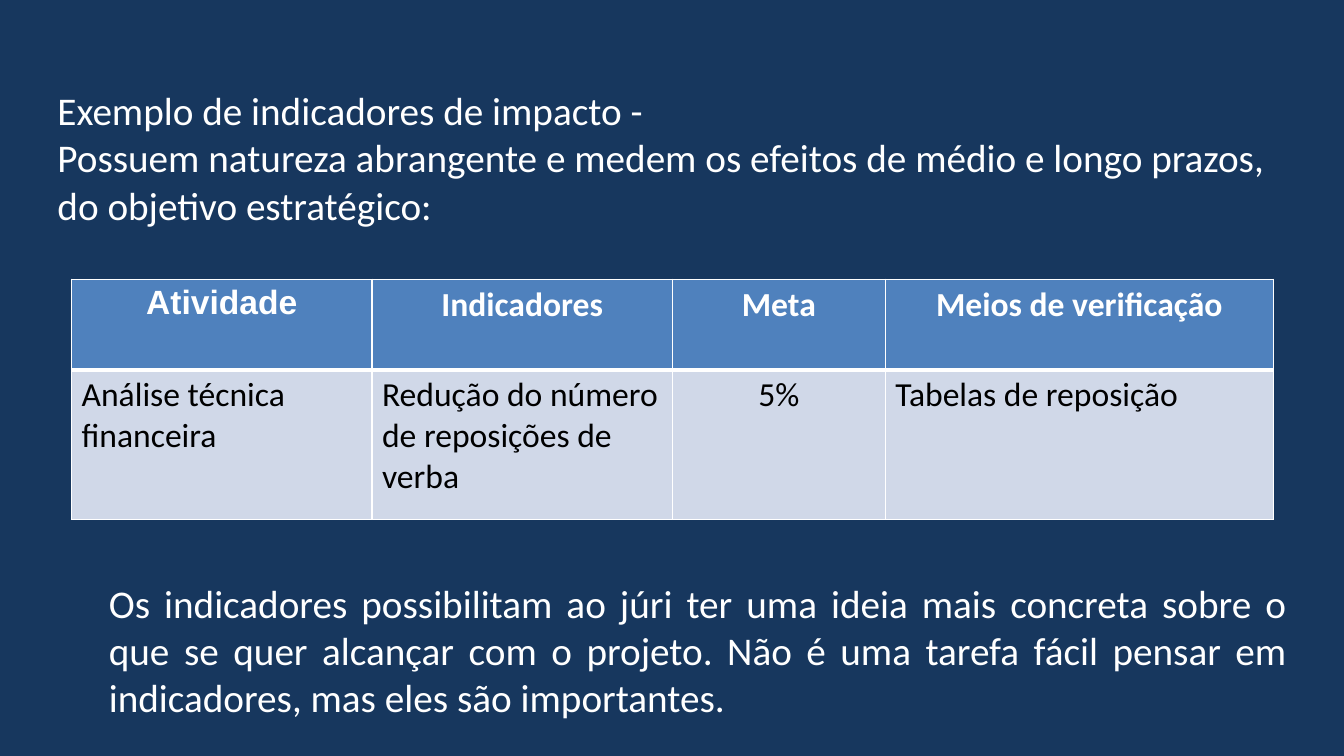
from lxml import etree
from pptx import Presentation
from pptx.dml.color import RGBColor
from pptx.enum.text import MSO_ANCHOR, MSO_AUTO_SIZE, PP_ALIGN
from pptx.oxml.ns import qn
from pptx.util import Inches, Pt

LEFT, CENTER, JUSTIFY = PP_ALIGN.LEFT, PP_ALIGN.CENTER, PP_ALIGN.JUSTIFY
TOP = MSO_ANCHOR.TOP
FIXED = MSO_AUTO_SIZE.NONE

NAVY, BLUE, PALE = "17375E", "4F81BD", "D0D8E8"
WHITE, BLACK = "FFFFFF", "000000"

TITLE_BOX = (0.47, 0.81, 12.39, 1.51)
TABLE_BOX = (0.71, 2.77, 11.92, 2.38)
CLOSING_BOX = (0.98, 5.7, 11.88, 1.51)
COLUMN_WIDTHS = (2.98, 2.98, 2.11, 3.85)
ROW_HEIGHTS = (0.9, 1.48)

TITLE = (
    "Exemplo de indicadores de impacto -",
    "Possuem natureza abrangente e medem os efeitos de médio e longo prazos, "
    "do objetivo estratégico:",
)
HEADERS = ("Atividade", "Indicadores", "Meta", "Meios de verificação")
VALUES = (
    "Análise técnica financeira",
    "Redução do número de reposições de verba",
    "5%",
    "Tabelas de reposição",
)
CLOSING = (
    "Os indicadores possibilitam ao júri ter uma ideia mais concreta sobre o que se "
    "quer alcançar com o projeto. Não é uma tarefa fácil pensar em indicadores, "
    "mas eles são importantes.",
)


def color(value):
    return RGBColor.from_string(value)


def write(para, text, size=28, font="Calibri", fill=WHITE, bold=False, align=LEFT, before=0):
    para.alignment = align
    para.space_before = Pt(before)
    span = para.add_run()
    span.text = text
    span.font.size = Pt(size)
    span.font.name = font
    span.font.bold = bold
    span.font.color.rgb = color(fill)


def fill_placeholder(holder, box, texts, align=LEFT):
    holder.left, holder.top, holder.width, holder.height = map(Inches, box)
    frame = holder.text_frame
    frame.word_wrap = True
    frame.auto_size = FIXED
    frame.vertical_anchor = TOP
    for index, text in enumerate(texts):
        para = frame.add_paragraph() if index else frame.paragraphs[0]
        write(para, text, align=align)
        properties = para._p.get_or_add_pPr()
        properties.set("marL", "0")
        properties.set("indent", "0")
        etree.SubElement(properties, qn("a:buNone"))


def set_borders(cell, **widths):
    properties = cell._tc.get_or_add_tcPr()
    for side in "LRTB":
        line = etree.SubElement(properties, qn(f"a:ln{side}"), w=str(Pt(widths.get(side, 1))))
        paint = etree.SubElement(line, qn("a:solidFill"))
        etree.SubElement(paint, qn("a:srgbClr"), val=WHITE)


def format_cell(cell, text, background, borders, **style):
    set_borders(cell, **borders)
    cell.fill.solid()
    cell.fill.fore_color.rgb = color(background)
    write(cell.text_frame.paragraphs[0], text, size=24, **style)


def add_indicator_table(page, box):
    table = page.shapes.add_table(
        len(ROW_HEIGHTS), len(COLUMN_WIDTHS), *map(Inches, box)
    ).table
    for column, width in zip(table.columns, COLUMN_WIDTHS):
        column.width = Inches(width)
    for row, height in zip(table.rows, ROW_HEIGHTS):
        row.height = Inches(height)
    for index, (header, value) in enumerate(zip(HEADERS, VALUES)):
        format_cell(
            table.cell(0, index), header, BLUE, {"B": 3},
            font="Calibri" if index else "Arial", bold=True, align=CENTER, before=6,
        )
        format_cell(
            table.cell(1, index), value, PALE, {"T": 3},
            fill=BLACK, align=CENTER if header == "Meta" else LEFT,
        )


def build_indicator_slide(deck):
    page = deck.slides.add_slide(deck.slide_layouts[1])
    page.background.fill.solid()
    page.background.fill.fore_color.rgb = color(NAVY)
    fill_placeholder(page.shapes.title, TITLE_BOX, TITLE)
    add_indicator_table(page, TABLE_BOX)
    fill_placeholder(page.placeholders[1], CLOSING_BOX, CLOSING, align=JUSTIFY)


def main():
    deck = Presentation()
    deck.slide_width, deck.slide_height = Inches(13.33), Inches(7.5)
    build_indicator_slide(deck)
    deck.save("out.pptx")


if __name__ == "__main__":
    main()
